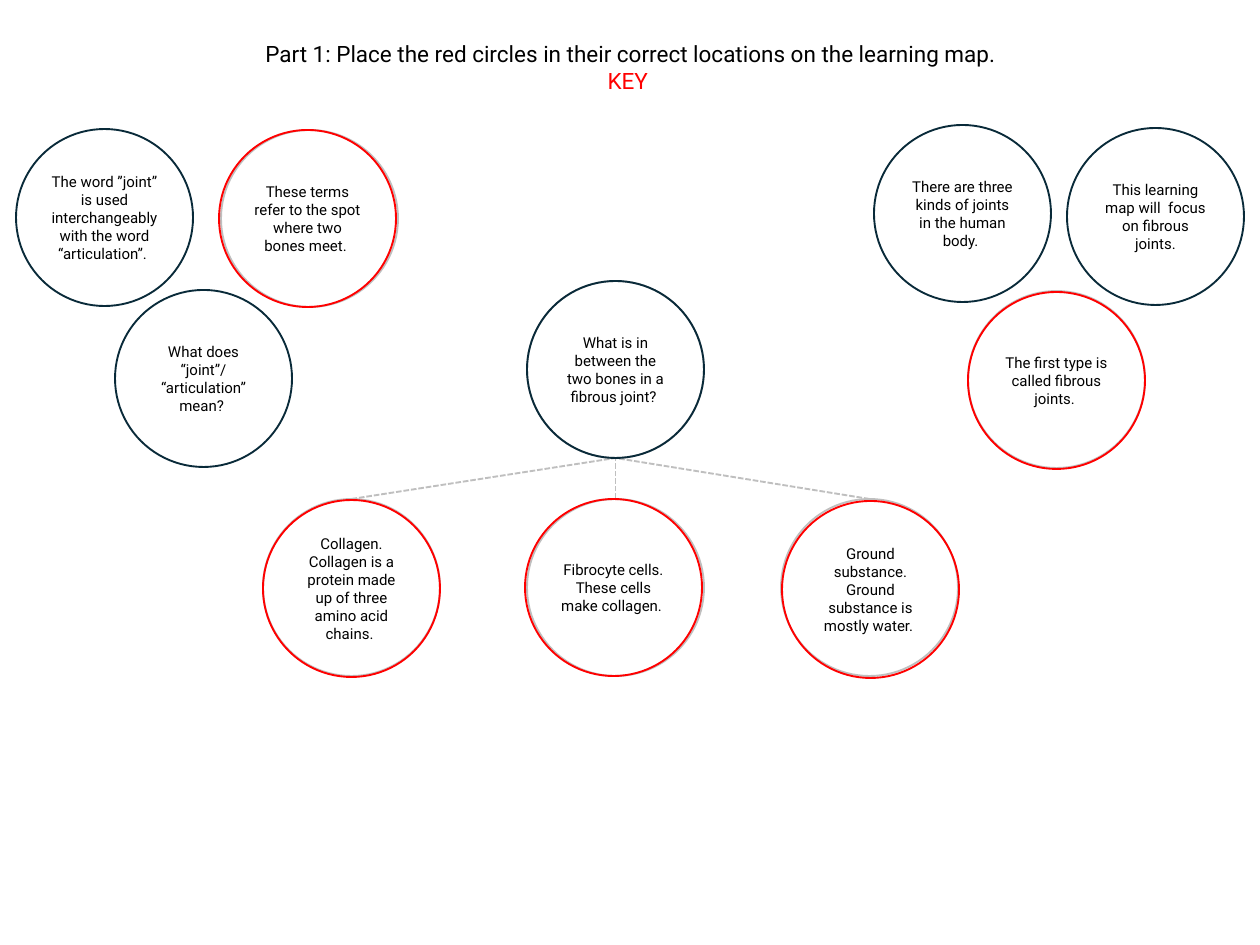
import pptx
import pptx.util
import pptx.dml.color
import pptx.enum.dml
import pptx.enum.shapes
import pptx.enum.text
import pptx.oxml.ns
import lxml.etree

RGB = pptx.dml.color.RGBColor
GREY = RGB(0xBF, 0xBF, 0xBF)
NAVY = RGB(0x09, 0x2A, 0x39)
RED = RGB(0xFF, 0x00, 0x00)
BLACK = RGB(0x00, 0x00, 0x00)
FONT = "Roboto"
SIZE = 177  # diameter of every circle

# Hub question and the three answers below it
HUB = (527, 281)
ANSWERS = [(263, 499), (527, 499), (781, 499)]
# Other empty places
PLACES = [(221, 130), (968, 291)]

CARDS = [
    (115, 290, NAVY, "What does “joint”/ “articulation” mean? "),
    (16, 129, NAVY, "The word ”joint” is used interchangeably with the word “articulation”. "),
    (219, 130, RED, "These terms refer to the spot where two bones meet. "),
    (874, 125, NAVY, "There are three kinds of joints in the human body. "),
    (968, 292, RED, "The first type is called fibrous joints. "),
    (*HUB, NAVY, "What is in between the two bones in a fibrous joint? "),
    (263, 500, RED, "Collagen. Collagen is a protein made up of three amino acid chains. "),
    (525, 499, RED, "Fibrocyte cells. These cells make collagen. "),
    (1067, 128, NAVY, "This learning map will  focus on fibrous joints."),
    (782, 501, RED, "Ground substance. Ground substance is mostly water. "),
]


def px(n):
    return pptx.util.Emu(n * 10160)


def style(para, size):
    para.alignment = pptx.enum.text.PP_ALIGN.CENTER
    para.font.name = FONT
    para.font.size = pptx.util.Pt(size)
    para.font.color.rgb = BLACK


def circle(slide, left, top, color, text=""):
    shape = slide.shapes.add_shape(
        pptx.enum.shapes.MSO_SHAPE.OVAL, px(left), px(top), px(SIZE), px(SIZE))
    shape.shadow.inherit = False
    shape.fill.background()
    shape.line.color.rgb = color
    shape.line.width = pptx.util.Pt(1.5)
    if text:
        frame = shape.text_frame
        frame.word_wrap = True
        frame.vertical_anchor = pptx.enum.text.MSO_ANCHOR.MIDDLE
        frame.text = text
        style(frame.paragraphs[0], 12)
    return shape


def link(slide, answer):
    """Dashed line from the top of an answer to the bottom of the hub."""
    left, top = HUB
    end = px(left) + px(SIZE) // 2, px(top + SIZE)
    line = slide.shapes.add_connector(
        pptx.enum.shapes.MSO_CONNECTOR.STRAIGHT, *end, *end)
    line.begin_connect(answer, 0)
    line.line.color.rgb = GREY
    line.line.width = pptx.util.Pt(1.5)
    line.line.dash_style = pptx.enum.dml.MSO_LINE.SQUARE_DOT
    props = line._element.spPr
    lxml.etree.SubElement(props, pptx.oxml.ns.qn("a:effectLst"))


def title(slide):
    box = slide.shapes.add_textbox(px(242), px(36), px(777), px(36))
    box.text_frame.word_wrap = True
    para = box.text_frame.paragraphs[0]
    style(para, 18)
    for text, color in [
        ("Part 1: Place the red circles in their correct locations "
         "on the learning map. ", BLACK),
        ("KEY ", RED),
    ]:
        run = para.add_run()
        run.text = text
        run.font.name = FONT
        run.font.size = pptx.util.Pt(18)
        run.font.color.rgb = color


def main():
    deck = pptx.Presentation()
    deck.slide_width, deck.slide_height = px(1260), px(945)
    slide = deck.slides.add_slide(deck.slide_layouts[6])

    # Grey places and the links to the hub
    for spot in [*PLACES, HUB]:
        circle(slide, *spot, GREY)
    for spot in ANSWERS:
        link(slide, circle(slide, *spot, GREY))

    # Circles with text, then the heading
    for card in CARDS:
        circle(slide, *card)
    title(slide)
    deck.save("out.pptx")


if __name__ == "__main__":
    main()
